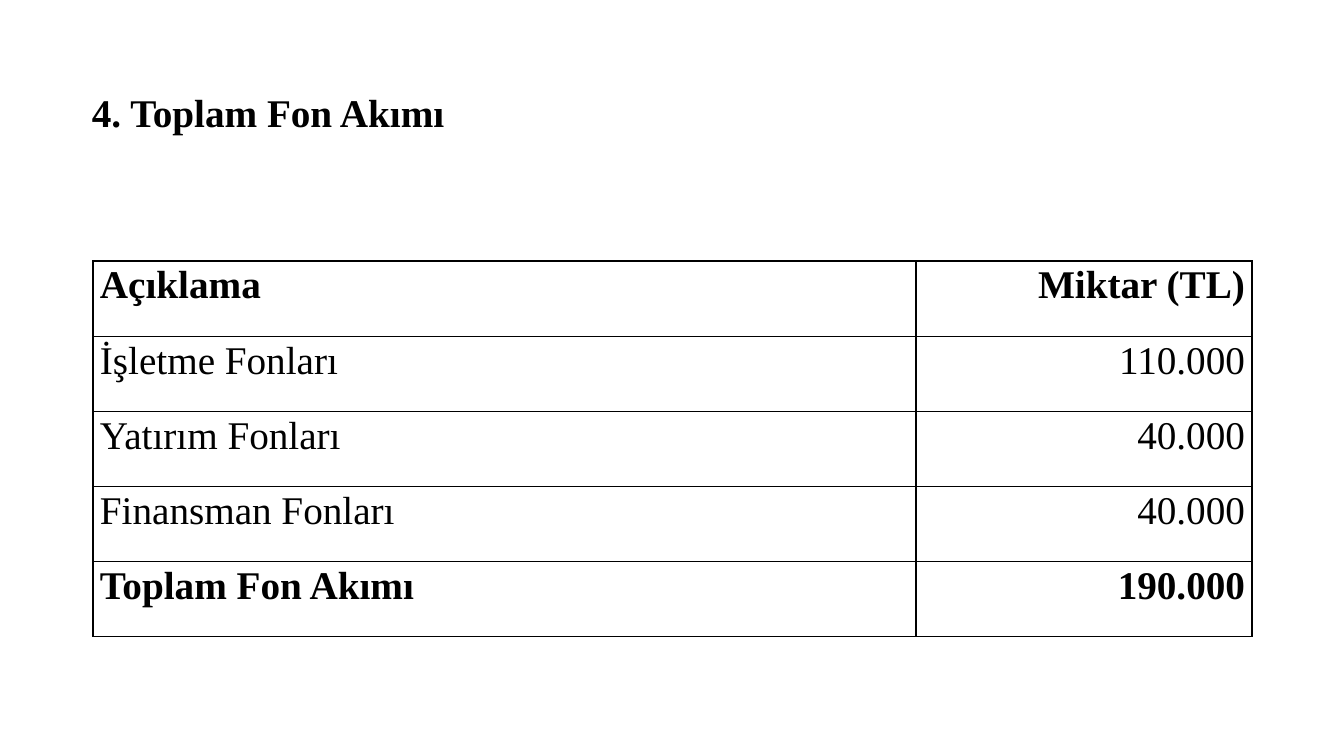
import pptx
import pptx.dml.color
import pptx.enum.text
import pptx.oxml
import pptx.oxml.ns
import pptx.util

PX = 914400 / 100.8
FONT = "Times New Roman"
BLACK = "000000"
ALIGN = pptx.enum.text.PP_ALIGN

FUND_ROWS = [
    ("Açıklama", "Miktar (TL)"),
    ("İşletme Fonları", "110.000"),
    ("Yatırım Fonları", "40.000"),
    ("Finansman Fonları", "40.000"),
    ("Toplam Fon Akımı", "190.000"),
]


def px(length):
    return pptx.util.Emu(round(length * PX))


def color(value):
    return pptx.dml.color.RGBColor.from_string(value)


def write(frame, text, size=28, bold=False, align=ALIGN.LEFT, spacing=None, after=None):
    paragraph = frame.paragraphs[0]
    paragraph.alignment = align
    if spacing is not None:
        paragraph.line_spacing = spacing
    if after is not None:
        paragraph.space_after = pptx.util.Pt(after)
    run = paragraph.add_run()
    run.text = text
    run.font.name = FONT
    run.font.size = pptx.util.Pt(size)
    run.font.bold = bold
    run.font.color.rgb = color(BLACK)


def add_borders(cell):
    properties = cell._tc.get_or_add_tcPr()
    for position, side in enumerate(("lnL", "lnR", "lnT", "lnB")):
        border = pptx.oxml.parse_xml(
            f'<a:{side} {pptx.oxml.ns.nsdecls("a")} w="{pptx.util.Pt(1)}">'
            f'<a:solidFill><a:srgbClr val="{BLACK}"/></a:solidFill></a:{side}>'
        )
        properties.insert(position, border)


def add_heading(slide, left, top, width, height):
    heading = slide.shapes.add_textbox(px(left), px(top), px(width), px(height))
    frame = heading.text_frame
    frame.word_wrap = True
    frame.auto_size = pptx.enum.text.MSO_AUTO_SIZE.SHAPE_TO_FIT_TEXT
    write(frame, "4. Toplam Fon Akımı", bold=True)


def add_fund_table(slide, left, top, width, height, amount_width):
    funds = slide.shapes.add_table(
        len(FUND_ROWS), 2, px(left), px(top), px(width), px(height)
    ).table
    funds.horz_banding = False
    funds.columns[0].width = px(width - amount_width)
    funds.columns[1].width = px(amount_width)
    for row_index, entries in enumerate(FUND_ROWS):
        bold = row_index in (0, len(FUND_ROWS) - 1)
        for column, (text, align) in enumerate(zip(entries, (ALIGN.JUSTIFY, ALIGN.RIGHT))):
            cell = funds.cell(row_index, column)
            cell.margin_left = cell.margin_right = px(7)
            cell.margin_top = cell.margin_bottom = 0
            cell.fill.background()
            add_borders(cell)
            write(cell.text_frame, text, bold=bold, align=align, spacing=1.07, after=8)


def main():
    presentation = pptx.Presentation()
    presentation.slide_width = px(1344)
    presentation.slide_height = px(756)
    slide = presentation.slides.add_slide(presentation.slide_layouts[6])
    add_heading(slide, 82, 83, 1163, 57)
    add_fund_table(slide, 93, 261, 1159, 376, amount_width=336)
    presentation.save("out.pptx")


if __name__ == "__main__":
    main()
